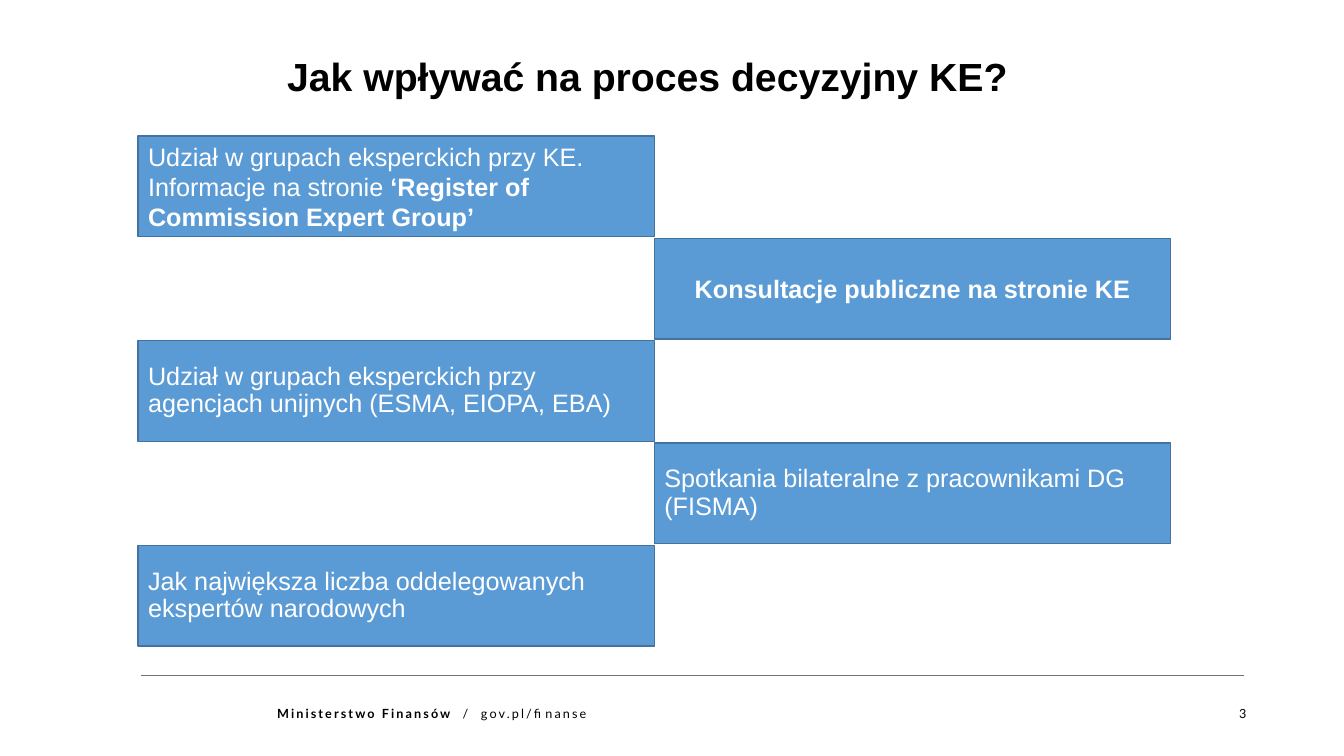
from pptx import Presentation
from pptx.dml.color import RGBColor
from pptx.enum.shapes import MSO_CONNECTOR, MSO_SHAPE
from pptx.enum.text import MSO_ANCHOR, PP_ALIGN
from pptx.oxml.ns import qn
from pptx.util import Inches, Pt
from lxml.etree import SubElement

COLORS = {"text": "000000", "box": "5B9BD5", "border": "43739E",
          "box_text": "FFFFFF", "rule": "767171"}

# Each step: alignment, line spacing, runs as (text, bold)
STEPS = [
    (PP_ALIGN.LEFT, 1.0, [
        ("Udział w grupach eksperckich przy KE. Informacje na stronie ", False),
        ("‘Register of Commission Expert Group’", True)]),
    (PP_ALIGN.CENTER, 1.0, [("Konsultacje publiczne na stronie KE", True)]),
    (PP_ALIGN.LEFT, 0.9, [
        ("Udział w grupach eksperckich przy agencjach unijnych (ESMA, EIOPA, EBA)", False)]),
    (PP_ALIGN.LEFT, 0.9, [("Spotkania bilateralne z pracownikami DG (FISMA)", False)]),
    (PP_ALIGN.LEFT, 0.9, [
        ("Jak największa liczba oddelegowanych ekspertów narodowych", False)]),
]


def color(name):
    return RGBColor.from_string(COLORS[name])


def write_runs(paragraph, runs, font_name, size, color_name, tracking=None):
    for text, bold in runs:
        run = paragraph.add_run()
        run.text = text
        run.font.name = font_name
        run.font.size = Pt(size)
        run.font.bold = bold
        run.font.color.rgb = color(color_name)
        if tracking:
            run._r.get_or_add_rPr().set("spc", str(int(tracking * 100)))


def add_title(slide, left, top, width, height):
    title = slide.shapes.title
    title.left, title.top = Inches(left), Inches(top)
    title.width, title.height = Inches(width), Inches(height)
    title.text_frame.vertical_anchor = MSO_ANCHOR.MIDDLE
    paragraph = title.text_frame.paragraphs[0]
    paragraph.alignment = PP_ALIGN.CENTER
    write_runs(paragraph, [("Jak wpływać na proces decyzyjny KE?", True)],
               "Arial", 28, "text")


def add_steps(slide, left, top, width, height):
    """Place the steps in a zigzag of two columns."""
    box_width, box_height = width / 2, 1
    pitch = (height - box_height) / (len(STEPS) - 1)
    for index, (alignment, spacing, runs) in enumerate(STEPS):
        box = slide.shapes.add_shape(
            MSO_SHAPE.RECTANGLE,
            Inches(left + index % 2 * box_width), Inches(top + index * pitch),
            Inches(box_width), Inches(box_height))
        box.shadow.inherit = False
        box.fill.solid()
        box.fill.fore_color.rgb = color("box")
        box.line.color.rgb = color("border")
        box.line.width = Pt(1)
        box.text_frame.word_wrap = True
        box.text_frame.vertical_anchor = MSO_ANCHOR.MIDDLE
        paragraph = box.text_frame.paragraphs[0]
        paragraph.alignment = alignment
        paragraph.line_spacing = spacing
        write_runs(paragraph, runs, "Arial", 18, "box_text")


def add_footer(slide, left, top, width):
    # Rule above the footer
    rule = slide.shapes.add_connector(
        MSO_CONNECTOR.STRAIGHT, Inches(left), Inches(top),
        Inches(left + width), Inches(top))
    rule.line.color.rgb = color("rule")
    rule.line.width = Pt(0.5)
    SubElement(rule._element.spPr, qn("a:effectLst"))

    # Ministry name and slide number
    parts = [
        (left + 1.25, 4.52, PP_ALIGN.LEFT,
         [("Ministerstwo Finansów  ", True), ("/  gov.pl/finanse", False)]),
        (left + width - 0.39, 0.51, PP_ALIGN.RIGHT, [("3", False)]),
    ]
    for part_left, part_width, alignment, runs in parts:
        text_box = slide.shapes.add_textbox(
            Inches(part_left), Inches(top + 0.28), Inches(part_width), Inches(0.22))
        text_frame = text_box.text_frame
        text_frame.word_wrap = True
        text_frame.margin_top = text_frame.margin_bottom = 0
        text_frame.vertical_anchor = MSO_ANCHOR.MIDDLE
        paragraph = text_frame.paragraphs[0]
        paragraph.alignment = alignment
        paragraph.line_spacing = 0.9
        write_runs(paragraph, runs, "Lato", 9, "text", tracking=1.5)


def main():
    presentation = Presentation()
    presentation.slide_width = Inches(13.33)
    presentation.slide_height = Inches(7.5)
    slide = presentation.slides.add_slide(presentation.slide_layouts[5])
    add_footer(slide, 1.4, 6.7, 10.94)
    add_title(slide, 1.53, 0.47, 9.78, 0.57)
    add_steps(slide, 1.37, 1.35, 10.24, 5.06)
    presentation.save("out.pptx")


if __name__ == "__main__":
    main()
